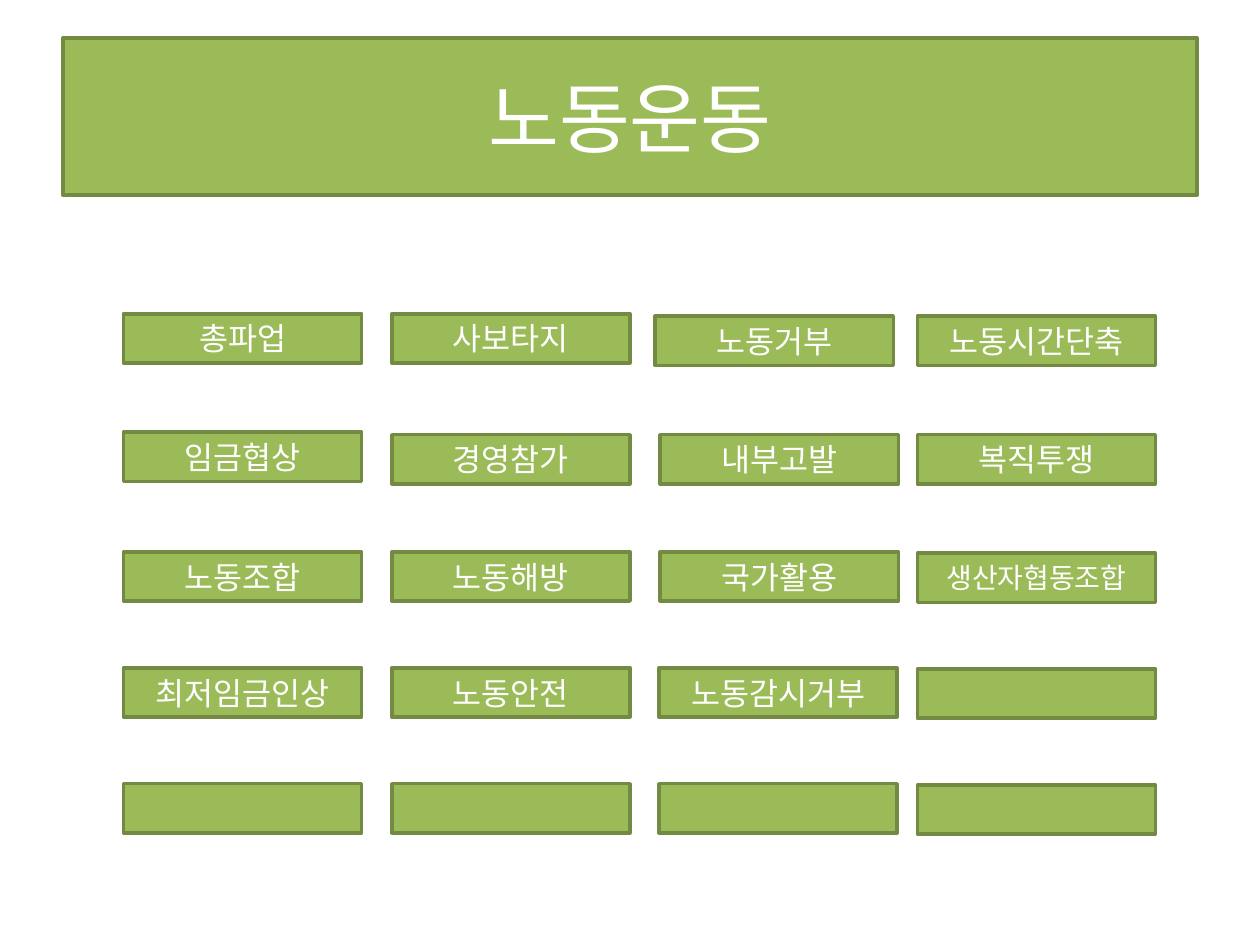
import pptx
import pptx.util
import pptx.dml.color
import pptx.enum.shapes
import pptx.enum.text
import pptx.oxml.ns
from lxml import etree
from pptx.util import Inches

COLORS = {"fill": "9BBB59", "line": "738A42", "text": "FFFFFF"}
FONT = "Noto Sans CJK KR"

# Grid of topics; empty cells stay as blank boxes
TOPICS = [
    ["총파업", "사보타지", "노동거부", "노동시간단축"],
    ["임금협상", "경영참가", "내부고발", "복직투쟁"],
    ["노동조합", "노동해방", "국가활용", "생산자협동조합"],
    ["최저임금인상", "노동안전", "노동감시거부", ""],
    ["", "", "", ""],
]
COLUMN_LEFTS = [0.98, 3.11, 5.24, 7.28]
ROW_TOPS = [2.49, 3.45, 4.38, 5.3, 6.22]
BOX_WIDTH, BOX_HEIGHT = 1.89, 0.39

# Small shifts (x, y) of boxes that sit off the grid, by (row, column)
SHIFTS = {
    (0, 2): (-0.04, 0.02),
    (0, 3): (0, 0.02),
    (1, 0): (0, -0.02),
    (2, 3): (0, 0.01),
    (3, 2): (-0.01, 0),
    (3, 3): (0, 0.01),
    (4, 2): (-0.01, 0),
    (4, 3): (0, 0.01),
}


def color(name):
    return pptx.dml.color.RGBColor.from_string(COLORS[name])


def set_text(shape, text, size):
    frame = shape.text_frame
    frame.word_wrap = True
    frame.vertical_anchor = pptx.enum.text.MSO_ANCHOR.MIDDLE
    paragraph = frame.paragraphs[0]
    paragraph.text = text
    paragraph.alignment = pptx.enum.text.PP_ALIGN.CENTER
    font = paragraph.font
    font.size = pptx.util.Pt(size)
    font.color.rgb = color("text")
    font.name = FONT
    # Korean text takes the East Asian typeface
    properties = paragraph._p.pPr.find(pptx.oxml.ns.qn("a:defRPr"))
    etree.SubElement(properties, pptx.oxml.ns.qn("a:ea"), typeface=FONT)


def add_box(slide, left, top, width, height, text, size=18):
    shape = slide.shapes.add_shape(
        pptx.enum.shapes.MSO_SHAPE.RECTANGLE,
        Inches(left), Inches(top), Inches(width), Inches(height))
    shape.shadow.inherit = False
    shape.fill.solid()
    shape.fill.fore_color.rgb = color("fill")
    shape.line.color.rgb = color("line")
    shape.line.width = pptx.util.Pt(2)
    if text:
        set_text(shape, text, size)


def add_topics(slide):
    for row, topics in enumerate(TOPICS):
        for column, topic in enumerate(topics):
            shift_x, shift_y = SHIFTS.get((row, column), (0, 0))
            add_box(slide, COLUMN_LEFTS[column] + shift_x,
                    ROW_TOPS[row] + shift_y, BOX_WIDTH, BOX_HEIGHT,
                    topic, 16 if len(topic) > 6 else 18)


def main():
    presentation = pptx.Presentation()
    presentation.slide_width = Inches(10)
    presentation.slide_height = Inches(7.5)
    slide = presentation.slides.add_slide(presentation.slide_layouts[6])

    # Title banner
    add_box(slide, 0.5, 0.3, 9, 1.25, "노동운동", 44)
    # Topic boxes
    add_topics(slide)

    presentation.save("out.pptx")


if __name__ == "__main__":
    main()
